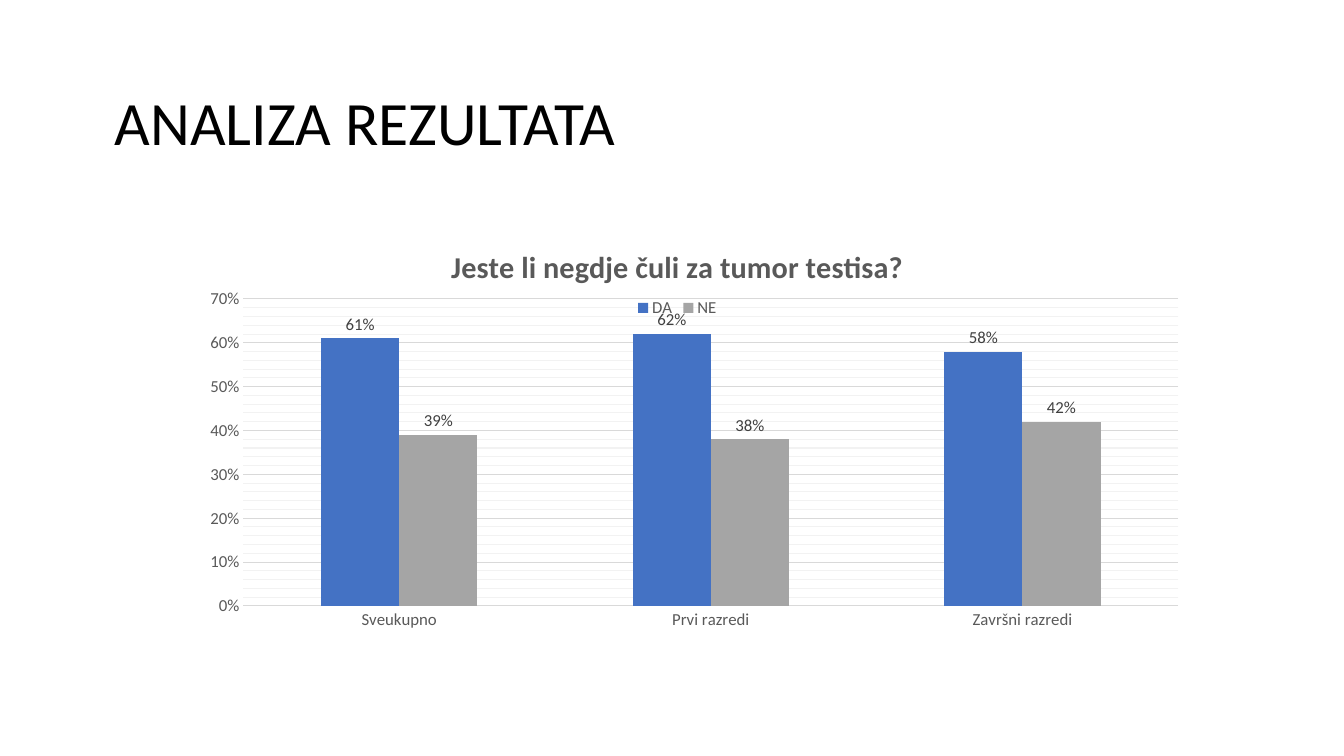
from copy import deepcopy

from lxml import etree
from pptx import Presentation, util as u
from pptx.chart.data import CategoryChartData
from pptx.dml.color import RGBColor
from pptx.enum import chart as ch, text
from pptx.oxml.ns import qn

CATEGORIES = ["Sveukupno", "Prvi razredi", "Završni razredi"]
ANSWERS = [
    ("DA", [0.61, 0.62, 0.58], "4472C4"),
    ("NE", [0.39, 0.38, 0.42], "A5A5A5"),
]


def color(value):
    return RGBColor.from_string(value)


def place(parent, index, **fractions):
    for old in parent.findall(qn("c:layout")):
        parent.remove(old)
    layout = etree.Element(qn("c:layout"))
    manual = etree.SubElement(layout, qn("c:manualLayout"))
    if "w" in fractions:
        etree.SubElement(manual, qn("c:layoutTarget")).set("val", "inner")
    for mode in ("xMode", "yMode"):
        etree.SubElement(manual, qn("c:" + mode)).set("val", "edge")
    for name, value in fractions.items():
        etree.SubElement(manual, qn("c:" + name)).set("val", str(value))
    parent.insert(index, layout)


class SlideBuilder:
    font_name = "Calibri"
    ink = "000000"
    muted = "595959"
    label_ink = "404040"
    grid = "D9D9D9"
    minor_grid = "F2F2F2"

    def __init__(self, deck):
        self.slide = deck.slides.add_slide(deck.slide_layouts[5])

    def style(self, font, size, ink, bold=False):
        font.name = self.font_name
        font.size = u.Pt(size)
        font.bold = bold
        font.color.rgb = color(ink)

    def line(self, target, ink):
        target.format.line.color.rgb = color(ink)
        target.format.line.width = u.Pt(0.75)

    def title(self, words, left, top, width, height):
        box = self.slide.shapes.title
        box.left, box.top = u.Inches(left), u.Inches(top)
        box.width, box.height = u.Inches(width), u.Inches(height)
        frame = box.text_frame
        frame.text = words
        frame.vertical_anchor = text.MSO_ANCHOR.MIDDLE
        para = frame.paragraphs[0]
        para.alignment = text.PP_ALIGN.LEFT
        para.line_spacing = 0.9
        self.style(para.runs[0].font, 44, self.ink)

    def column_chart(self, heading, categories, answers, left, top, width, height):
        data = CategoryChartData(number_format="0%")
        data.categories = categories
        for name, values, _ in answers:
            data.add_series(name, values)
        chart = self.slide.shapes.add_chart(
            ch.XL_CHART_TYPE.COLUMN_CLUSTERED,
            u.Inches(left), u.Inches(top), u.Inches(width), u.Inches(height), data,
        ).chart
        self.style(chart.font, 10, self.ink)
        self.chart_heading(chart, heading)
        self.chart_legend(chart)
        self.chart_axes(chart)
        plot = chart.plots[0]
        plot.gap_width = 199
        plot.overlap = 0
        plot.vary_by_categories = False
        for series, (_, _, fill) in zip(plot.series, answers):
            self.columns(series, fill)
        place(chart._chartSpace.chart.plotArea, 0, x=0.085, y=0.171, w=0.901, h=0.68)

    def chart_heading(self, chart, heading):
        chart.has_title = True
        frame = chart.chart_title.text_frame
        frame.text = heading
        self.style(frame.paragraphs[0].runs[0].font, 21.6, self.muted, bold=True)
        place(chart.chart_title._element, 1, x=0.28, y=0.04)

    def chart_legend(self, chart):
        chart.has_legend = True
        legend = chart.legend
        legend.position = ch.XL_LEGEND_POSITION.TOP
        legend.include_in_layout = False
        self.style(legend.font, 12, self.muted)
        place(legend._element, 1, x=0.46, y=0.16)

    def chart_axes(self, chart):
        for axis in (chart.category_axis, chart.value_axis):
            axis.major_tick_mark = axis.minor_tick_mark = ch.XL_TICK_MARK.NONE
            self.style(axis.tick_labels.font, 12, self.muted)
        self.line(chart.category_axis, self.grid)
        values = chart.value_axis
        values.format.line.fill.background()
        values.minimum_scale, values.maximum_scale = 0, 0.7
        values.major_unit, values.minor_unit = 0.1, 0.02
        values.has_major_gridlines = values.has_minor_gridlines = True
        self.line(values.major_gridlines, self.grid)
        self.minor_gridlines(values)
        values.tick_labels.number_format = "0%"
        values.tick_labels.number_format_is_linked = False

    def minor_gridlines(self, axis):
        major = axis._element.find(qn("c:majorGridlines"))
        minor = axis._element.find(qn("c:minorGridlines"))
        properties = deepcopy(major.find(qn("c:spPr")))
        for ink in properties.iter(qn("a:srgbClr")):
            ink.set("val", self.minor_grid)
        minor.append(properties)

    def columns(self, series, fill):
        series.format.fill.solid()
        series.format.fill.fore_color.rgb = color(fill)
        series.invert_if_negative = False
        labels = series.data_labels
        labels.show_value = True
        labels.number_format = "0%"
        labels.number_format_is_linked = False
        labels.position = ch.XL_LABEL_POSITION.OUTSIDE_END
        self.style(labels.font, 12, self.label_ink)


def main():
    deck = Presentation()
    deck.slide_width, deck.slide_height = u.Inches(13.33), u.Inches(7.5)
    builder = SlideBuilder(deck)
    builder.title("ANALIZA REZULTATA", 1.04, 0.52, 11.5, 1.45)
    builder.column_chart(
        "Jeste li negdje čuli za tumor testisa?", CATEGORIES, ANSWERS,
        1.54, 2.2, 10.29, 4.48,
    )
    deck.save("out.pptx")


if __name__ == "__main__":
    main()
